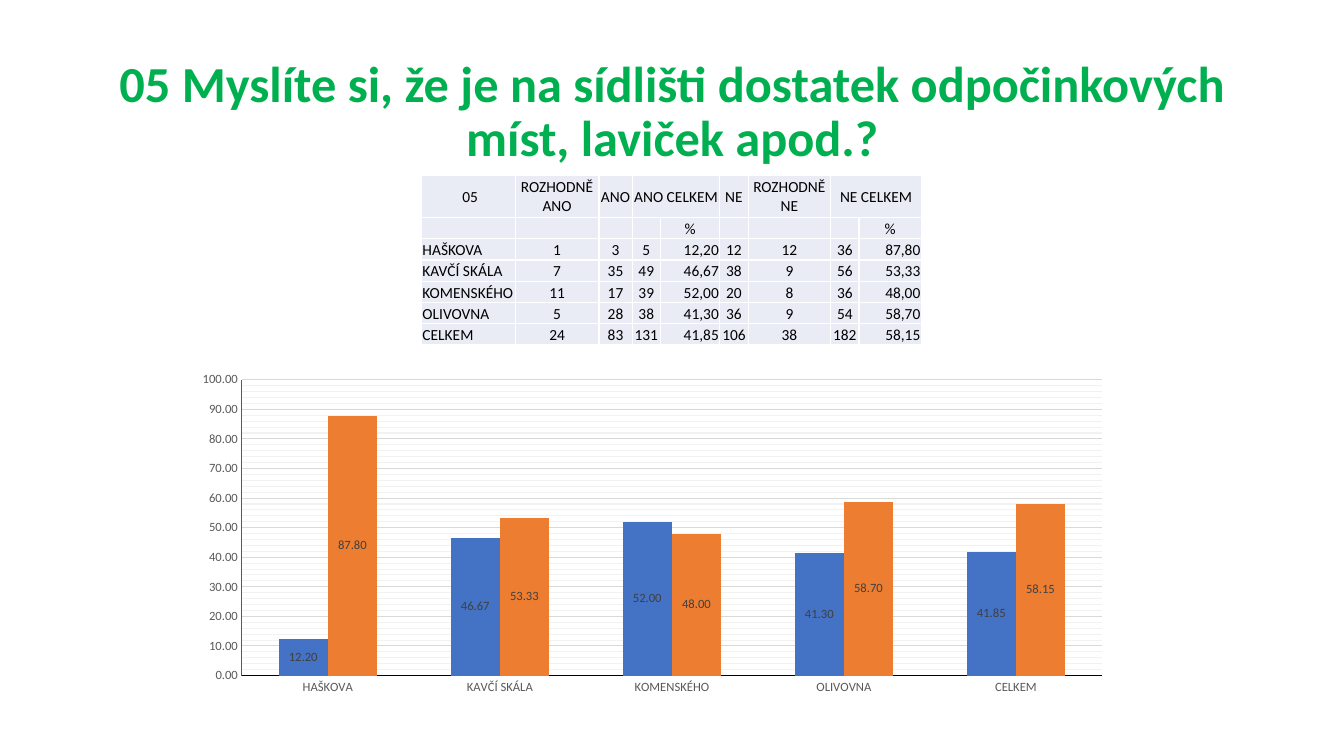
import pptx
import pptx.chart.data
import pptx.dml.color
import pptx.enum.chart
import pptx.enum.text
import pptx.oxml
import pptx.oxml.ns
import pptx.util
from lxml import etree

QUESTION = "05 Myslíte si, že je na sídlišti dostatek odpočinkových míst, laviček apod.?"
HEADINGS = [" 05", "ROZHODNĚ ANO", "ANO", "ANO CELKEM", "", "NE", "ROZHODNĚ NE", "NE CELKEM", ""]
UNITS = ["", "", "", "", "%", "", "", "", "%"]
ANSWERS = [
    ("HAŠKOVA", 1, 3, 5, 12.20, 12, 12, 36, 87.80),
    ("KAVČÍ SKÁLA", 7, 35, 49, 46.67, 38, 9, 56, 53.33),
    ("KOMENSKÉHO", 11, 17, 39, 52.00, 20, 8, 36, 48.00),
    ("OLIVOVNA", 5, 28, 38, 41.30, 36, 9, 54, 58.70),
    ("CELKEM", 24, 83, 131, 41.85, 106, 38, 182, 58.15),
]
YES_SHARE, NO_SHARE = 4, 8
TOTALS = (3, 7)  # headings that span two columns
SERIES = [("Series 1", YES_SHARE, "4472C4"), ("Series 2", NO_SHARE, "ED7D31")]

SLIDE_W, SLIDE_H = 13.33, 7.5
# left, top, width, height in percent of the slide
TITLE_AREA = (6.9, 5.33, 86.27, 19.33)
TABLE_AREA = (31.36, 23.2, 37.28, 22.27)
CHART_AREA = (10.65, 46.93, 74.94, 49.47)
PLOT_AREA = {"x": 9.8, "y": 6.7, "w": 85.4, "h": 79.1}  # percent of the chart
COLUMN_WIDTHS = [0.93, 0.83, 0.33, 0.28, 0.59, 0.28, 0.82, 0.28, 0.62]
LINE_HEIGHT = 0.21
FONT = "Calibri"
CENTER = pptx.enum.text.PP_ALIGN.CENTER
MIDDLE = pptx.enum.text.MSO_ANCHOR.MIDDLE


def color(value):
    return pptx.dml.color.RGBColor.from_string(value)


def area(shares):
    sides = (SLIDE_W, SLIDE_H) * 2
    return [pptx.util.Inches(side * share / 100) for side, share in zip(sides, shares)]


def apply(target, values):
    for name, value in values.items():
        setattr(target, name, value)


def style_font(font, size, ink, bold=False):
    apply(font, {"name": FONT, "size": pptx.util.Pt(size), "bold": bold})
    font.color.rgb = color(ink)


def style_line(line, ink):
    line.color.rgb = color(ink)
    line.width = pptx.util.Pt(0.75)


def add_title(slide):
    frame = slide.shapes.add_textbox(*area(TITLE_AREA)).text_frame
    apply(frame, {"word_wrap": True, "vertical_anchor": MIDDLE})
    paragraph = frame.paragraphs[0]
    apply(paragraph, {"text": QUESTION, "alignment": CENTER, "line_spacing": 0.9})
    style_font(paragraph.runs[0].font, 36, "00B050", True)


def add_borders(cell):
    properties = cell._tc.get_or_add_tcPr()
    for position, side in enumerate(("lnL", "lnR", "lnT", "lnB")):
        properties.insert(position, pptx.oxml.parse_xml(
            f'<a:{side} {pptx.oxml.ns.nsdecls("a")} w="12700"><a:solidFill>'
            f'<a:srgbClr val="FFFFFF"/></a:solidFill></a:{side}>'))


def fill_cell(cell, value, row, column):
    inset = pptx.util.Inches(0.01)
    apply(cell, {
        "margin_left": inset, "margin_right": inset, "margin_top": inset, "margin_bottom": 0,
        "vertical_anchor": pptx.enum.text.MSO_ANCHOR.BOTTOM if row else MIDDLE,
    })
    cell.fill.solid()
    cell.fill.fore_color.rgb = color("E9EBF5")
    add_borders(cell)
    paragraph = cell.text_frame.paragraphs[0]
    paragraph.alignment = CENTER
    if row > 1 and column == 0:
        paragraph.alignment = pptx.enum.text.PP_ALIGN.LEFT
    elif row > 1 and column in (YES_SHARE, NO_SHARE):
        paragraph.alignment = pptx.enum.text.PP_ALIGN.RIGHT
        value = f"{value:.2f}".replace(".", ",")
    if value == "":
        # keeps the empty line as low as the filled ones
        etree.SubElement(paragraph._p, pptx.oxml.ns.qn("a:endParaRPr"), sz="1100")
    else:
        run = paragraph.add_run()
        run.text = str(value)
        style_font(run.font, 11, "000000")


def add_answers(slide):
    rows = [HEADINGS, UNITS, *ANSWERS]
    table = slide.shapes.add_table(len(rows), len(HEADINGS), *area(TABLE_AREA)).table
    apply(table, {"first_row": False, "horz_banding": False})
    for column, width in zip(table.columns, COLUMN_WIDTHS):
        column.width = pptx.util.Inches(width)
    for r, values in enumerate(rows):
        table.rows[r].height = pptx.util.Inches(LINE_HEIGHT * (1 if r else 2))
        for c, value in enumerate(values):
            fill_cell(table.cell(r, c), value, r, c)
    for c in TOTALS:
        table.cell(0, c).merge(table.cell(0, c + 1))


def place_plot(chart):
    plot_area = chart._chartSpace.chart.plotArea
    for layout in plot_area.findall(pptx.oxml.ns.qn("c:layout")):
        plot_area.remove(layout)
    modes = '<c:layoutTarget val="inner"/><c:xMode val="edge"/><c:yMode val="edge"/>'
    sizes = "".join(f'<c:{key} val="{share / 100:.3f}"/>' for key, share in PLOT_AREA.items())
    plot_area.insert(0, pptx.oxml.parse_xml(
        f'<c:layout {pptx.oxml.ns.nsdecls("c")}><c:manualLayout>{modes}{sizes}'
        '</c:manualLayout></c:layout>'))


def style_minor_gridlines(axis, ink):
    gridlines = axis._element.find(pptx.oxml.ns.qn("c:minorGridlines"))
    gridlines.append(pptx.oxml.parse_xml(
        f'<c:spPr {pptx.oxml.ns.nsdecls("c", "a")}><a:ln w="9525"><a:solidFill>'
        f'<a:srgbClr val="{ink}"/></a:solidFill></a:ln></c:spPr>'))


def style_axes(chart):
    for axis, ink in ((chart.category_axis, "000000"), (chart.value_axis, "595959")):
        apply(axis, {"major_tick_mark": pptx.enum.chart.XL_TICK_MARK.NONE,
                     "minor_tick_mark": pptx.enum.chart.XL_TICK_MARK.NONE})
        style_font(axis.tick_labels.font, 9, "595959")
        style_line(axis.format.line, ink)
    scale = chart.value_axis
    apply(scale, {"minimum_scale": 0, "maximum_scale": 100, "major_unit": 10, "minor_unit": 2,
                  "has_major_gridlines": True, "has_minor_gridlines": True})
    apply(scale.tick_labels, {"number_format": "0.00", "number_format_is_linked": False})
    style_line(scale.major_gridlines.format.line, "D9D9D9")
    style_minor_gridlines(scale, "F2F2F2")


def add_shares(slide):
    shares = pptx.chart.data.CategoryChartData(number_format="0.00")
    shares.categories = [answer[0] for answer in ANSWERS]
    for name, column, _ in SERIES:
        shares.add_series(name, [answer[column] for answer in ANSWERS])
    chart = slide.shapes.add_chart(
        pptx.enum.chart.XL_CHART_TYPE.COLUMN_CLUSTERED, *area(CHART_AREA), shares).chart
    apply(chart, {"has_title": False, "has_legend": False})
    style_font(chart.font, 10, "000000")
    plot = chart.plots[0]
    apply(plot, {"gap_width": 150, "overlap": 0, "vary_by_categories": False})
    for bars, (_, _, ink) in zip(plot.series, SERIES):
        bars.format.fill.solid()
        bars.format.fill.fore_color.rgb = color(ink)
        apply(bars.data_labels, {
            "show_value": True, "number_format": "0.00", "number_format_is_linked": False,
            "position": pptx.enum.chart.XL_LABEL_POSITION.CENTER,
        })
        style_font(bars.data_labels.font, 9, "404040")
    style_axes(chart)
    place_plot(chart)


def main():
    deck = pptx.Presentation()
    apply(deck, {"slide_width": pptx.util.Inches(SLIDE_W),
                 "slide_height": pptx.util.Inches(SLIDE_H)})
    slide = deck.slides.add_slide(deck.slide_layouts[6])
    add_title(slide)
    add_answers(slide)
    add_shares(slide)
    deck.save("out.pptx")


if __name__ == "__main__":
    main()
